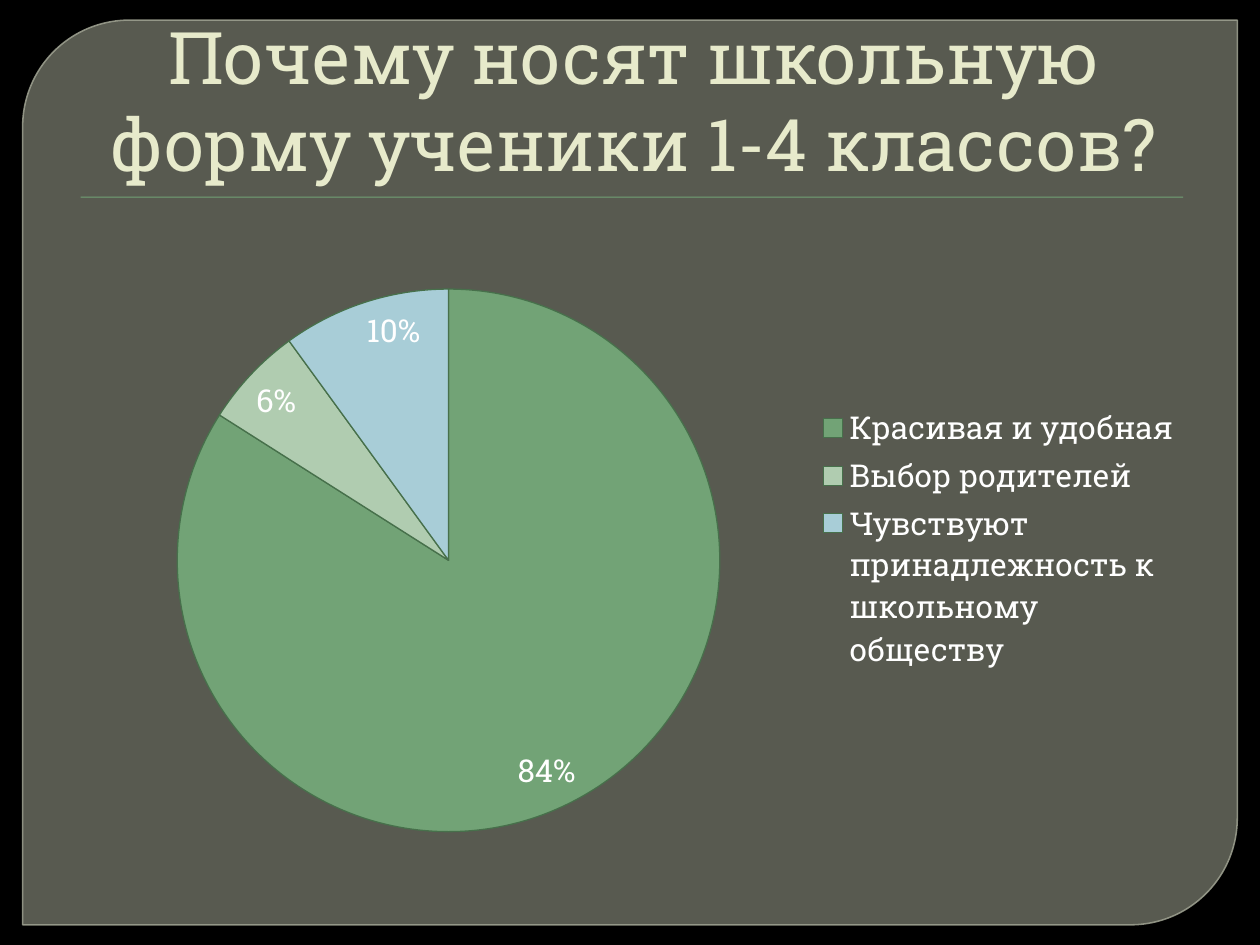
from lxml import etree
from pptx import Presentation
from pptx.chart.data import CategoryChartData
from pptx.dml.color import RGBColor
from pptx.enum.chart import XL_CHART_TYPE, XL_LABEL_POSITION, XL_LEGEND_POSITION
from pptx.enum.shapes import MSO_SHAPE
from pptx.enum.text import MSO_ANCHOR, MSO_AUTO_SIZE, PP_ALIGN
from pptx.oxml.ns import qn
from pptx.util import Inches, Pt

PIE = XL_CHART_TYPE.PIE
INSIDE = XL_LABEL_POSITION.INSIDE_END
RIGHT = XL_LEGEND_POSITION.RIGHT
PANEL = MSO_SHAPE.ROUND_2_DIAG_RECTANGLE
RECT = MSO_SHAPE.RECTANGLE
FONT = "Roboto Slab"
SLICES = [
    ("Красивая и удобная", 0.84, "72A376"),
    ("Выбор родителей", 0.06, "B0CCB0"),
    ("Чувствуют принадлежность к школьному обществу", 0.1, "A8CDD7"),
]


def paint(fill, color, alpha=100):
    """Make a fill solid, with its opacity in percent."""
    fill.solid()
    fill.fore_color.rgb = RGBColor.from_string(color)
    if alpha < 100:
        tone = fill._xPr.find(".//" + qn("a:srgbClr"))
        etree.SubElement(tone, qn("a:alpha"), val=str(alpha * 1000))


def style(font, size, color):
    font.name = FONT
    font.size = Pt(size)
    font.color.rgb = RGBColor.from_string(color)


def add_block(slide, kind, box, color, alpha=100):
    block = slide.shapes.add_shape(kind, *map(Inches, box))
    block.shadow.inherit = False
    paint(block.fill, color, alpha)
    block.line.fill.background()
    return block


def add_panel(slide):
    panel = add_block(slide, PANEL, (0.18, 0.16, 9.64, 7.18), "888B7B", 65)
    panel.adjustments[0] = 0.118
    panel.adjustments[1] = 0
    paint(panel.line.fill, "9DA090", 88)
    panel.line.width = Pt(0.87)
    # The panel lies behind the title placeholder
    slide.shapes._spTree.insert(2, panel._element)


def set_title(slide, text):
    title = slide.shapes.title
    title.left, title.top = Inches(0.5), Inches(0.28)
    title.width, title.height = Inches(9), Inches(1.25)
    frame = title.text_frame
    frame.text = text
    frame.word_wrap = True
    frame.auto_size = MSO_AUTO_SIZE.NONE
    frame.vertical_anchor = MSO_ANCHOR.BOTTOM
    para = frame.paragraphs[0]
    para.alignment = PP_ALIGN.CENTER
    para._p.get_or_add_pPr().set("marL", str(Inches(0.06)))
    style(para.runs[0].font, 41.4, "E7EACB")


def place(part, index, box, inner=False):
    """Lay out a chart part by its shares of the chart's size."""
    for old in part.findall(qn("c:layout")):
        part.remove(old)
    layout = etree.Element(qn("c:layout"))
    manual = etree.SubElement(layout, qn("c:manualLayout"))
    pairs = [("layoutTarget", "inner")] if inner else []
    pairs += [("xMode", "edge"), ("yMode", "edge"), *zip("xywh", box)]
    for name, val in pairs:
        etree.SubElement(manual, qn("c:" + name), val=str(val))
    part.insert(index, layout)


def add_pie(slide, box):
    data = CategoryChartData(number_format="0%")
    data.categories = [name for name, _, _ in SLICES]
    data.add_series("Series 1", [val for _, val, _ in SLICES])
    chart = slide.shapes.add_chart(PIE, *map(Inches, box), data).chart
    chart.has_title = False
    style(chart.font, 18, "FFFFFF")

    plot = chart.plots[0]
    plot.vary_by_categories = True
    for i, (_, _, color) in enumerate(SLICES):
        form = plot.series[0].points[i].format
        paint(form.fill, color)
        paint(form.line.fill, "47704B")
        form.line.width = Pt(0.75)

    labels = plot.series[0].data_labels
    labels.show_value = True
    labels.number_format = "0%"
    labels.number_format_is_linked = False
    labels.position = INSIDE
    style(labels.font, 18, "FFFFFF")

    chart.has_legend = True
    legend = chart.legend
    legend.position = RIGHT
    legend.include_in_layout = False
    style(legend.font, 18, "FFFFFF")
    area = chart._chartSpace.chart.plotArea
    place(area, 0, (0.1, 0.1, 0.48, 0.87), inner=True)
    place(legend._element, 1, (0.66, 0.28, 0.33, 0.44))


def main():
    deck = Presentation()
    deck.slide_width, deck.slide_height = Inches(10), Inches(7.5)
    slide = deck.slides.add_slide(deck.slide_layouts[5])
    paint(slide.background.fill, "000000")
    add_panel(slide)
    add_block(slide, RECT, (0.64, 1.56, 8.75, 0.01), "72A376")
    set_title(slide, "Почему носят школьную форму ученики 1-4 классов?")
    add_pie(slide, (0.5, 1.8, 9, 4.95))
    deck.save("out.pptx")


if __name__ == "__main__":
    main()
